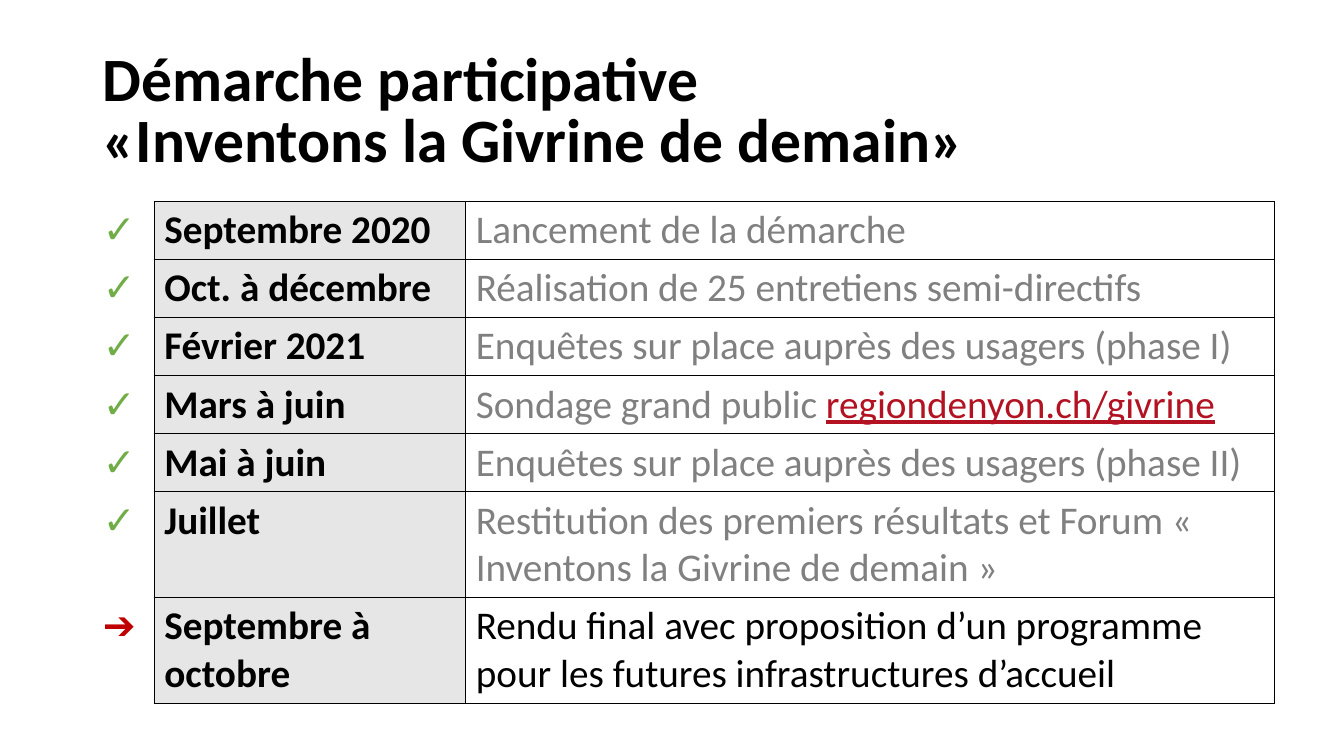
from dataclasses import dataclass

from lxml import etree
from pptx import Presentation
from pptx.dml.color import RGBColor
from pptx.enum.text import MSO_ANCHOR, MSO_AUTO_SIZE, PP_ALIGN
from pptx.oxml.ns import qn
from pptx.util import Inches, Pt

LEFT = PP_ALIGN.LEFT
MIDDLE = MSO_ANCHOR.MIDDLE
NO_AUTOFIT = MSO_AUTO_SIZE.NONE
FONT = "Calibri"
COLORS = {
    "black": "000000",
    "gray": "808080",
    "green": "70AD47",
    "arrow": "C00000",
    "link": "B21221",
    "white": "FFFFFF",
    "period": "E7E6E6",
}
COLUMN_WIDTHS = (0.61, 3.09, 8.02)
LINE_HEIGHT, ROW_PADDING = 0.47, 0.1


@dataclass
class Step:
    period: str
    activity: str
    address: str = ""
    lines: int = 1
    done: bool = True


STEPS = [
    Step("Septembre 2020", "Lancement de la démarche"),
    Step("Oct. à décembre", "Réalisation de 25 entretiens semi-directifs"),
    Step("Février 2021", "Enquêtes sur place auprès des usagers (phase I)"),
    Step("Mars à juin", "Sondage grand public ", address="regiondenyon.ch/givrine"),
    Step("Mai à juin", "Enquêtes sur place auprès des usagers (phase II)"),
    Step("Juillet", "Restitution des premiers résultats et Forum « Inventons la Givrine de demain »",
         lines=2),
    Step("Septembre à octobre",
         "Rendu final avec proposition d’un programme pour les futures infrastructures d’accueil",
         lines=2, done=False),
]


def style_font(font, size: float, color: str, bold: bool) -> None:
    font.name = FONT
    font.size = Pt(size)
    font.bold = bold
    font.color.rgb = RGBColor.from_string(COLORS[color])


def set_borders(cell, visible: str) -> None:
    """Draw thin black lines on the given sides (L, R, T, B) and clear the others."""
    properties = cell._tc.get_or_add_tcPr()
    for index, side in enumerate("LRTB"):
        line = etree.Element(qn(f"a:ln{side}"), w=str(Pt(1)))
        if side in visible:
            fill = etree.SubElement(line, qn("a:solidFill"))
            etree.SubElement(fill, qn("a:srgbClr"), val=COLORS["black"])
        else:
            etree.SubElement(line, qn("a:noFill"))
        properties.insert(index, line)


def fill_cell(cell, text: str, color: str, bold: bool, background: str, borders: str) -> None:
    cell.fill.solid()
    cell.fill.fore_color.rgb = RGBColor.from_string(COLORS[background])
    set_borders(cell, borders)
    cell.text_frame.text = text
    style_font(cell.text_frame.paragraphs[0].runs[0].font, 28, color, bold)


def add_title(slide) -> None:
    title = slide.shapes.title
    title.left, title.top = Inches(0.92), Inches(0.4)
    title.width, title.height = Inches(10.15), Inches(1.45)
    frame = title.text_frame
    frame.text = "Démarche participative\v«Inventons la Givrine de demain»"
    frame.auto_size = NO_AUTOFIT
    frame.vertical_anchor = MIDDLE
    paragraph = frame.paragraphs[0]
    paragraph.alignment = LEFT
    paragraph.line_spacing = Pt(44)
    for run in paragraph.runs:
        style_font(run.font, 44, "black", True)


def add_schedule(slide) -> None:
    heights = [ROW_PADDING + LINE_HEIGHT * step.lines for step in STEPS]
    table = slide.shapes.add_table(
        len(STEPS), len(COLUMN_WIDTHS), Inches(0.92), Inches(2),
        Inches(sum(COLUMN_WIDTHS)), Inches(sum(heights))).table
    table.first_row = table.horz_banding = False
    for column, width in zip(table.columns, COLUMN_WIDTHS):
        column.width = Inches(width)

    for row, height, step in zip(table.rows, heights, STEPS):
        row.height = Inches(height)
        mark, period, activity = row.cells
        symbol, mark_color = ("✓", "green") if step.done else ("➔", "arrow")
        fill_cell(mark, symbol, mark_color, True, "white", "R")
        fill_cell(period, step.period, "black", True, "period", "LRTB")
        activity_color = "gray" if step.done else "black"
        fill_cell(activity, step.activity, activity_color, False, "white", "LRTB")
        if step.address:
            run = activity.text_frame.paragraphs[0].add_run()
            run.text = step.address
            style_font(run.font, 28, "link", False)
            run.font.underline = True


def main() -> None:
    presentation = Presentation()
    presentation.slide_width, presentation.slide_height = Inches(13.33), Inches(7.5)
    slide = presentation.slides.add_slide(presentation.slide_layouts[5])
    add_title(slide)
    add_schedule(slide)
    presentation.save("out.pptx")


if __name__ == "__main__":
    main()
